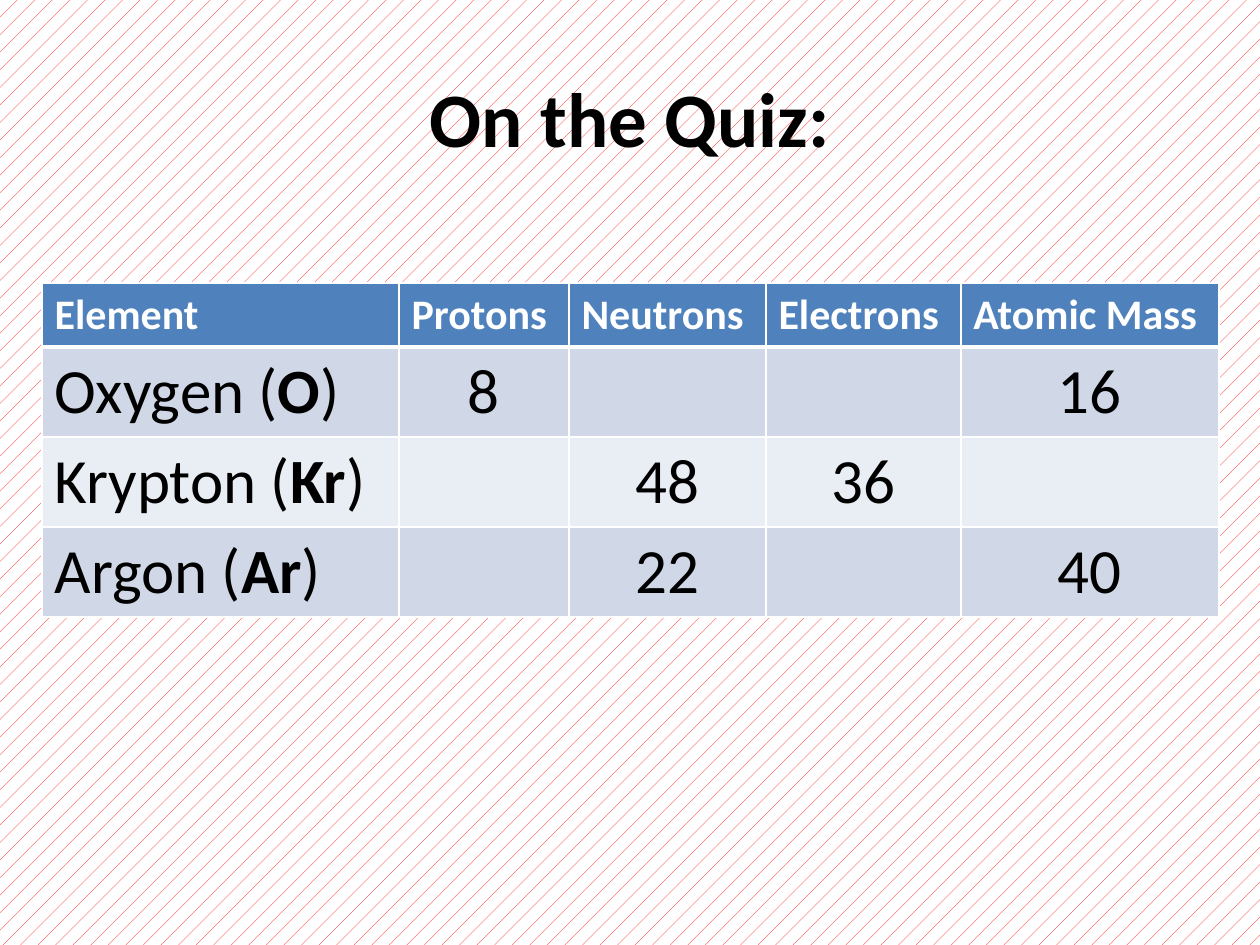
from lxml.etree import SubElement
from pptx import Presentation
from pptx.dml.color import RGBColor
from pptx.enum.dml import MSO_PATTERN
from pptx.enum.text import MSO_ANCHOR, PP_ALIGN
from pptx.oxml.ns import qn
from pptx.util import Pt

TITLE = "On the Quiz:"
HEADINGS = ["Element", "Protons", "Neutrons", "Electrons", "Atomic Mass"]
ELEMENTS = [
    ("Oxygen", "O", ["8", "", "", "16"]),
    ("Krypton", "Kr", ["", "48", "36", ""]),
    ("Argon", "Ar", ["", "22", "", "40"]),
]

PX = 914400 / 126
TITLE_BOX = (63, 38, 1134, 158)
TABLE_LEFT, TABLE_TOP = 42, 283
COLUMN_WIDTHS = [357, 170, 197, 195, 258]
HEADER_HEIGHT, ELEMENT_HEIGHT = 64, 90

BLACK = RGBColor(0x00, 0x00, 0x00)
WHITE = RGBColor(0xFF, 0xFF, 0xFF)
RED = RGBColor(0xFF, 0x00, 0x00)
HEADER_BLUE = RGBColor(0x4F, 0x81, 0xBD)
BANDS = [RGBColor(0xD0, 0xD8, 0xE8), RGBColor(0xE9, 0xED, 0xF4)]

TITLE_FORMAT = {"name": "Calibri", "size": Pt(44), "bold": True}
HEADER_FORMAT = {"name": "Calibri", "size": Pt(24), "bold": True}
BODY_FORMAT = {"name": "Calibri", "size": Pt(36), "bold": False}
SYMBOL_FORMAT = {**BODY_FORMAT, "bold": True}


def emu(px):
    return round(px * PX)


def add_run(paragraph, text, font_format, color):
    run = paragraph.add_run()
    run.text = text
    for attribute, value in font_format.items():
        setattr(run.font, attribute, value)
    run.font.color.rgb = color


def style_cell(cell, color, bottom_width=1):
    """Give the cell white borders and a solid fill."""
    properties = cell._tc.get_or_add_tcPr()
    for side, width in {"L": 1, "R": 1, "T": 1, "B": bottom_width}.items():
        border = SubElement(properties, qn(f"a:ln{side}"), w=str(Pt(width)))
        SubElement(SubElement(border, qn("a:solidFill")), qn("a:srgbClr"), val=str(WHITE))
    cell.fill.solid()
    cell.fill.fore_color.rgb = color


def add_title(slide):
    frame = slide.shapes.add_textbox(*map(emu, TITLE_BOX)).text_frame
    frame.word_wrap = True
    frame.vertical_anchor = MSO_ANCHOR.MIDDLE
    heading = frame.paragraphs[0]
    heading.alignment = PP_ALIGN.CENTER
    add_run(heading, TITLE, TITLE_FORMAT, BLACK)


def add_element_table(slide):
    heights = [HEADER_HEIGHT] + [ELEMENT_HEIGHT] * len(ELEMENTS)
    bounds = (TABLE_LEFT, TABLE_TOP, sum(COLUMN_WIDTHS), sum(heights))
    table = slide.shapes.add_table(len(heights), len(HEADINGS), *map(emu, bounds)).table
    for column, width in zip(table.columns, COLUMN_WIDTHS):
        column.width = emu(width)
    for row, height in zip(table.rows, heights):
        row.height = emu(height)

    for column, heading in enumerate(HEADINGS):
        cell = table.cell(0, column)
        style_cell(cell, HEADER_BLUE, bottom_width=3)
        add_run(cell.text_frame.paragraphs[0], heading, HEADER_FORMAT, WHITE)

    for row, (element, symbol, counts) in enumerate(ELEMENTS, start=1):
        for column in range(len(HEADINGS)):
            style_cell(table.cell(row, column), BANDS[(row - 1) % 2])
        label = table.cell(row, 0).text_frame.paragraphs[0]
        add_run(label, f"{element} (", BODY_FORMAT, BLACK)
        add_run(label, symbol, SYMBOL_FORMAT, BLACK)
        add_run(label, ")", BODY_FORMAT, BLACK)
        for column, count in enumerate(counts, start=1):
            if count:
                paragraph = table.cell(row, column).text_frame.paragraphs[0]
                paragraph.alignment = PP_ALIGN.CENTER
                add_run(paragraph, count, BODY_FORMAT, BLACK)


def main():
    prs = Presentation()
    prs.slide_width, prs.slide_height = emu(1260), emu(945)
    slide = prs.slides.add_slide(prs.slide_layouts[6])
    backdrop = slide.background.fill
    backdrop.patterned()
    backdrop.pattern = MSO_PATTERN.PERCENT_5
    backdrop.fore_color.rgb = RED
    backdrop.back_color.rgb = WHITE
    add_title(slide)
    add_element_table(slide)
    prs.save("out.pptx")


if __name__ == "__main__":
    main()
